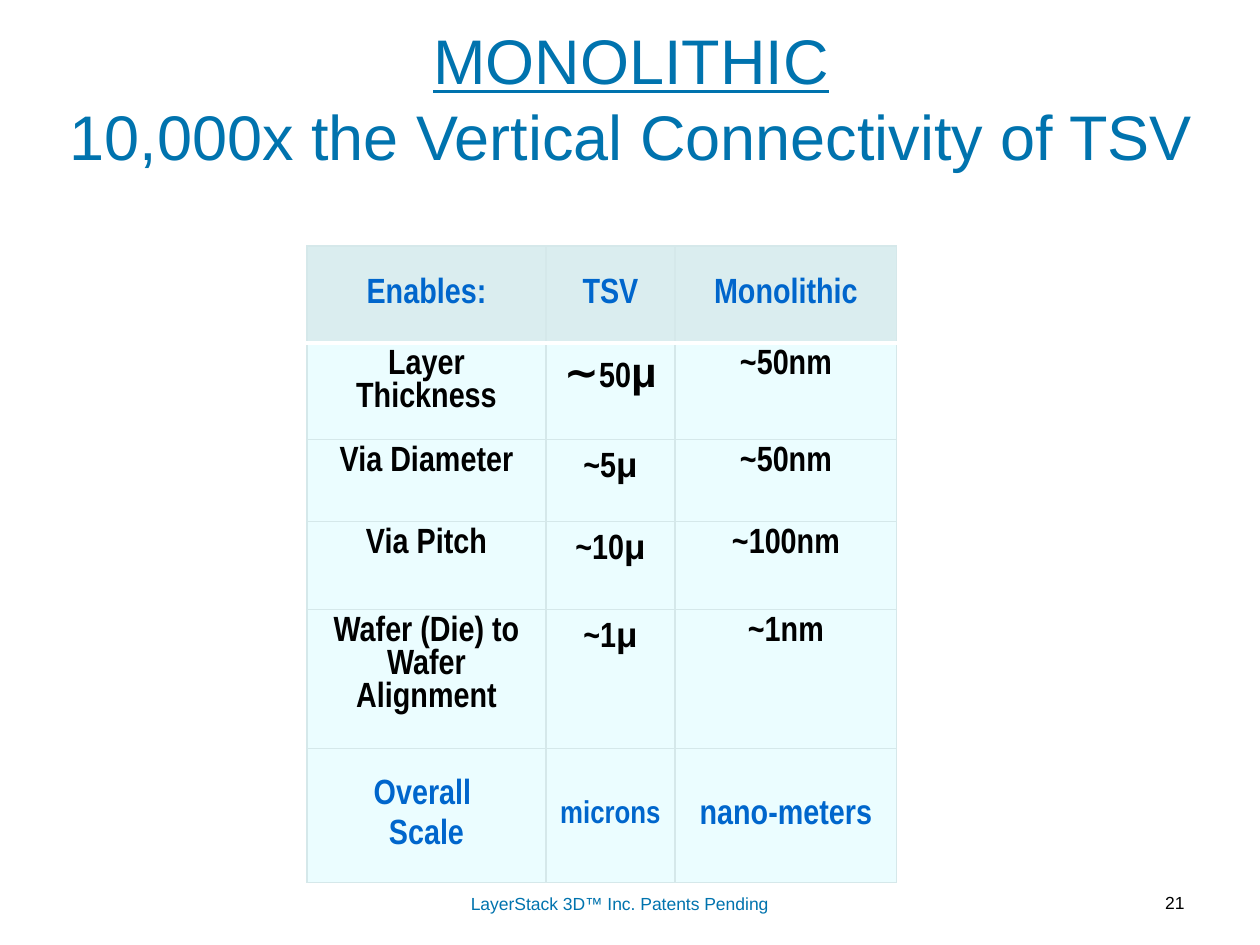
from lxml import etree
from pptx import Presentation
from pptx import util as u
from pptx.dml.color import RGBColor
from pptx.enum import text
from pptx.oxml.ns import qn

COLORS = {
    "title": "0073AE", "accent": "0066CC", "body": "000000",
    "header_fill": "DAEDEF", "body_fill": "EBFDFF",
    "grid": "D5E8EA", "rule": "FFFFFF",
}
SCALE = 914400 // 126
NARROW, WIDE = "Arial Narrow", "Arial"
TOP, MIDDLE = text.MSO_ANCHOR.TOP, text.MSO_ANCHOR.MIDDLE
CENTER, RIGHT = text.PP_ALIGN.CENTER, text.PP_ALIGN.RIGHT


def px(length):
    return u.Emu(length * SCALE)


class SlideBuilder:
    def __init__(self, slide):
        self.slide = slide

    def font(self, font, size, color, face=WIDE, bold=False):
        font.size, font.name, font.bold = u.Pt(size), face, bold
        font.color.rgb = RGBColor.from_string(COLORS[color])

    def textbox(self, box, size, color, align=CENTER, anchor=TOP):
        frame = self.slide.shapes.add_textbox(*map(px, box)).text_frame
        frame.word_wrap = True
        frame.vertical_anchor = anchor
        paragraph = frame.paragraphs[0]
        paragraph.alignment = align
        self.font(paragraph.font, size, color)
        return paragraph

    def table(self, left, top, widths, heights):
        table = self.slide.shapes.add_table(
            len(heights), len(widths), px(left), px(top),
            px(sum(widths)), px(sum(heights))).table
        for column, width in zip(table.columns, widths):
            column.width = px(width)
        for row, height in zip(table.rows, heights):
            row.height = px(height)
        return table

    def border(self, cell, side, color, points):
        line = etree.SubElement(cell._tc.get_or_add_tcPr(), qn(f"a:ln{side}"),
                                w=str(u.Pt(points)))
        fill = etree.SubElement(line, qn("a:solidFill"))
        etree.SubElement(fill, qn("a:srgbClr"), val=COLORS[color])

    def cell(self, cell, content, size, color, fill, anchor, rules):
        """Fill a cell; content is text, or a list of (text, face, size) runs."""
        for side in "LRTB":
            self.border(cell, side, *rules.get(side, ("grid", 0.75)))
        cell.fill.solid()
        cell.fill.fore_color.rgb = RGBColor.from_string(COLORS[fill])
        cell.vertical_anchor = anchor
        frame = cell.text_frame
        if isinstance(content, str):
            frame.text = content
            for paragraph in frame.paragraphs:
                self.font(paragraph.font, size, color, NARROW, True)
        else:
            for words, face, points in content:
                run = frame.paragraphs[0].add_run()
                run.text = words
                self.font(run.font, points, color, face, True)
        for paragraph in frame.paragraphs:
            paragraph.alignment = CENTER
        for paragraph in frame.paragraphs[1:]:
            paragraph.space_before = u.Pt(4)


def microns(value):
    return [(f"~{value}", NARROW, 20), ("μ", WIDE, 20)]


ROWS = [
    ("Enables:", "TSV", "Monolithic"),
    ("Layer Thickness", [("∼", WIDE, 24), ("50", NARROW, 20), ("μ", WIDE, 24)], "~50nm"),
    ("Via Diameter", microns(5), "~50nm"),
    ("Via Pitch", microns(10), "~100nm"),
    ("Wafer (Die) to Wafer Alignment", microns(1), "~1nm"),
    ("Overall \nScale", "microns", "nano-meters"),
]


def main():
    deck = Presentation()
    deck.slide_width, deck.slide_height = px(1260), px(945)
    builder = SlideBuilder(deck.slides.add_slide(deck.slide_layouts[6]))

    # Title
    title = builder.textbox((53, 25, 1174, 144), 36, "title", anchor=MIDDLE)
    subject = title.add_run()
    subject.text = "MONOLITHIC"
    subject.font.underline = True
    title.add_run().text = " "
    title.add_line_break()
    title.add_run().text = "10,000x the Vertical Connectivity of TSV "

    # Comparison table
    comparison = builder.table(307, 246, (239, 129, 222), (97, 81, 82, 88, 133, 134))
    last = len(ROWS) - 1
    white_rule = ("rule", 2)
    for r, row in enumerate(ROWS):
        framed = r in (0, last)
        rules = {0: {"B": white_rule}, 1: {"T": white_rule}}.get(r, {})
        for c, content in enumerate(row):
            builder.cell(comparison.cell(r, c), content,
                         18 if content == "microns" else 20,
                         "accent" if framed else "body",
                         "body_fill" if r else "header_fill",
                         MIDDLE if framed else TOP, rules)

    # Footer and slide number
    footer = builder.textbox((420, 887, 399, 33), 10, "title", anchor=MIDDLE)
    footer.add_run().text = "LayerStack 3D™ Inc. Patents Pending"
    number = builder.textbox((1057, 886, 140, 41), 10, "body", RIGHT)
    number.add_run().text = "21"

    deck.save("out.pptx")


if __name__ == "__main__":
    main()
